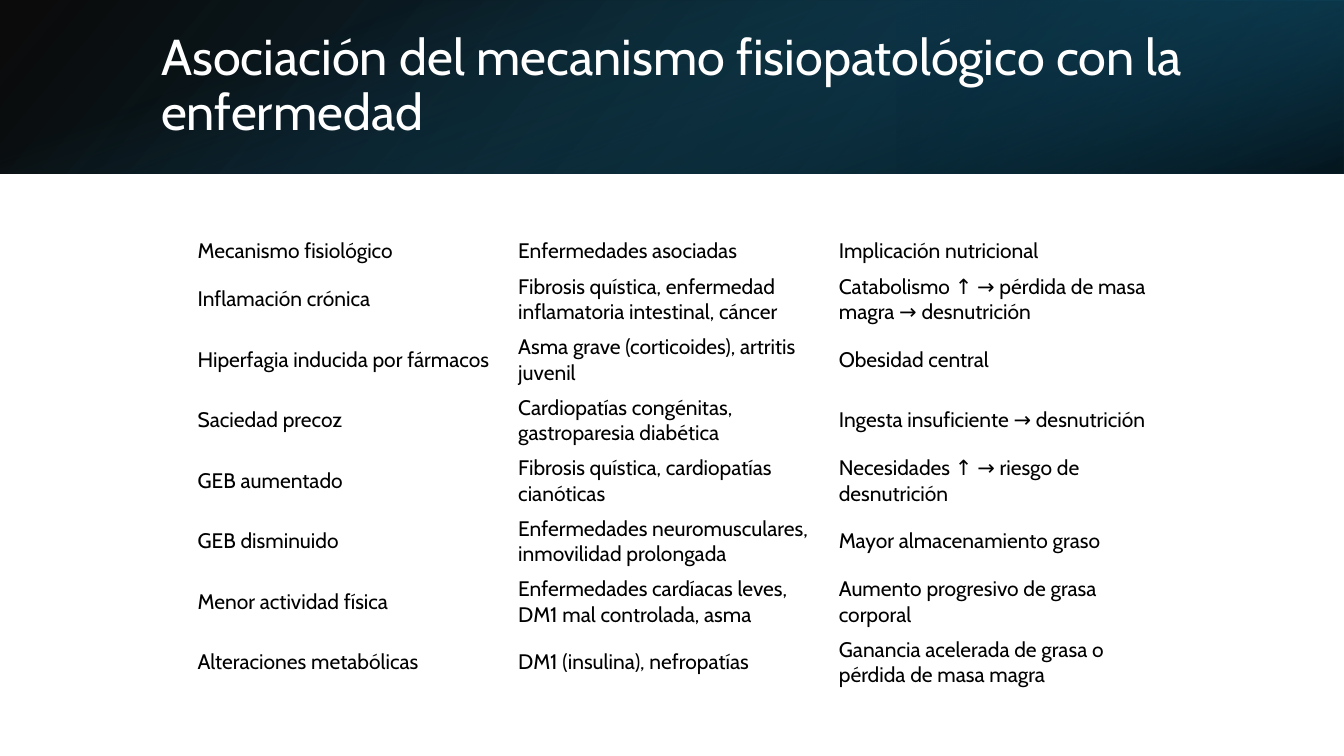
from dataclasses import dataclass

from lxml import etree
from pptx import Presentation
from pptx import util as u
from pptx.dml.color import RGBColor
from pptx.enum import shapes, text
from pptx.oxml import ns

FONT = "Cabin"


@dataclass(frozen=True)
class Stop:
    position: int  # percent along the gradient
    color: str
    opacity: int = 100


@dataclass(frozen=True)
class Band:
    left: float
    top: float
    width: float
    height: float
    stops: tuple[Stop, ...]
    angle: int
    rotation: int = 0
    flipped: bool = False


BANDS = [
    Band(0, 0, 13.33, 1.72, (Stop(0, "000000", 96), Stop(100, "104862")), 140, flipped=True),
    Band(8.89, 0, 4.44, 1.72, (Stop(19, "0B3041", 68), Stop(100, "156082", 79)), 320, 180, True),
    Band(5.8, -5.8, 1.72, 13.33, (Stop(23, "156082", 0), Stop(99, "000000", 74)), 340, 90),
]

TITLE = "Asociación del mecanismo fisiopatológico con la enfermedad"
COLUMN_WIDTHS = [3.18, 3.18, 3.22]
HEADER_HEIGHT, ROW_HEIGHT = 0.36, 0.6
ROWS = [
    ("Mecanismo fisiológico", "Enfermedades asociadas", "Implicación nutricional"),
    ("Inflamación crónica", "Fibrosis quística, enfermedad inflamatoria intestinal, cáncer",
     "Catabolismo ↑ → pérdida de masa magra → desnutrición"),
    ("Hiperfagia inducida por fármacos", "Asma grave (corticoides), artritis juvenil",
     "Obesidad central"),
    ("Saciedad precoz", "Cardiopatías congénitas, gastroparesia diabética",
     "Ingesta insuficiente → desnutrición"),
    ("GEB aumentado", "Fibrosis quística, cardiopatías cianóticas",
     "Necesidades ↑ → riesgo de desnutrición"),
    ("GEB disminuido", "Enfermedades neuromusculares, inmovilidad prolongada",
     "Mayor almacenamiento graso"),
    ("Menor actividad física", "Enfermedades cardíacas leves, DM1 mal controlada, asma",
     "Aumento progresivo de grasa corporal"),
    ("Alteraciones metabólicas", "DM1 (insulina), nefropatías",
     "Ganancia acelerada de grasa o pérdida de masa magra"),
]


def rgb(color: str) -> RGBColor:
    return RGBColor.from_string(color)


def style(paragraph, size: float, color: str) -> None:
    paragraph.font.name = FONT
    paragraph.font.size = u.Pt(size)
    paragraph.font.color.rgb = rgb(color)


def add_band(page, band: Band) -> None:
    box = page.shapes.add_shape(
        shapes.MSO_SHAPE.RECTANGLE,
        *map(u.Inches, (band.left, band.top, band.width, band.height)))
    box.shadow.inherit = False
    box.line.fill.background()
    box.rotation = band.rotation
    properties = box.element.spPr
    if band.flipped:
        properties.xfrm.set("flipH", "1")

    # Gradient with transparent stops, placed right after the geometry
    gradient = etree.Element(ns.qn("a:gradFill"), rotWithShape="1")
    stop_list = etree.SubElement(gradient, ns.qn("a:gsLst"))
    for stop in band.stops:
        mark = etree.SubElement(stop_list, ns.qn("a:gs"), pos=str(stop.position * 1000))
        color = etree.SubElement(mark, ns.qn("a:srgbClr"), val=stop.color)
        if stop.opacity < 100:
            etree.SubElement(color, ns.qn("a:alpha"), val=str(stop.opacity * 1000))
    etree.SubElement(gradient, ns.qn("a:lin"), ang=str(band.angle * 60000), scaled="0")
    properties.find(ns.qn("a:prstGeom")).addnext(gradient)


def add_title(page) -> None:
    box = page.shapes.add_textbox(*map(u.Inches, (1.5, 0.38, 10.98, 0.96)))
    frame = box.text_frame
    frame.word_wrap = True
    frame.vertical_anchor = text.MSO_ANCHOR.MIDDLE
    para = frame.paragraphs[0]
    para.text = TITLE
    para.line_spacing = 0.9
    style(para, 36, "FFFFFF")


def add_mechanism_table(page) -> None:
    height = HEADER_HEIGHT + ROW_HEIGHT * (len(ROWS) - 1)
    table = page.shapes.add_table(
        len(ROWS), len(COLUMN_WIDTHS),
        *map(u.Inches, (1.88, 2.31, sum(COLUMN_WIDTHS), height))).table
    table.first_row = table.horz_banding = False
    for column, width in zip(table.columns, COLUMN_WIDTHS):
        column.width = u.Inches(width)
    for index, (row, entries) in enumerate(zip(table.rows, ROWS)):
        row.height = u.Inches(ROW_HEIGHT if index else HEADER_HEIGHT)
        for cell, entry in zip(row.cells, entries):
            cell.fill.background()
            cell.vertical_anchor = text.MSO_ANCHOR.MIDDLE
            cell.margin_left = cell.margin_right = u.Inches(0.08)
            cell.margin_top = cell.margin_bottom = u.Inches(0.04)
            cell.text = entry
            style(cell.text_frame.paragraphs[0], 15, "000000")


def main() -> None:
    deck = Presentation()
    deck.slide_width, deck.slide_height = u.Inches(13.33), u.Inches(7.5)
    page = deck.slides.add_slide(deck.slide_layouts[6])
    # Header background
    for band in BANDS:
        add_band(page, band)
    # Content
    add_title(page)
    add_mechanism_table(page)
    deck.save("out.pptx")


if __name__ == "__main__":
    main()
